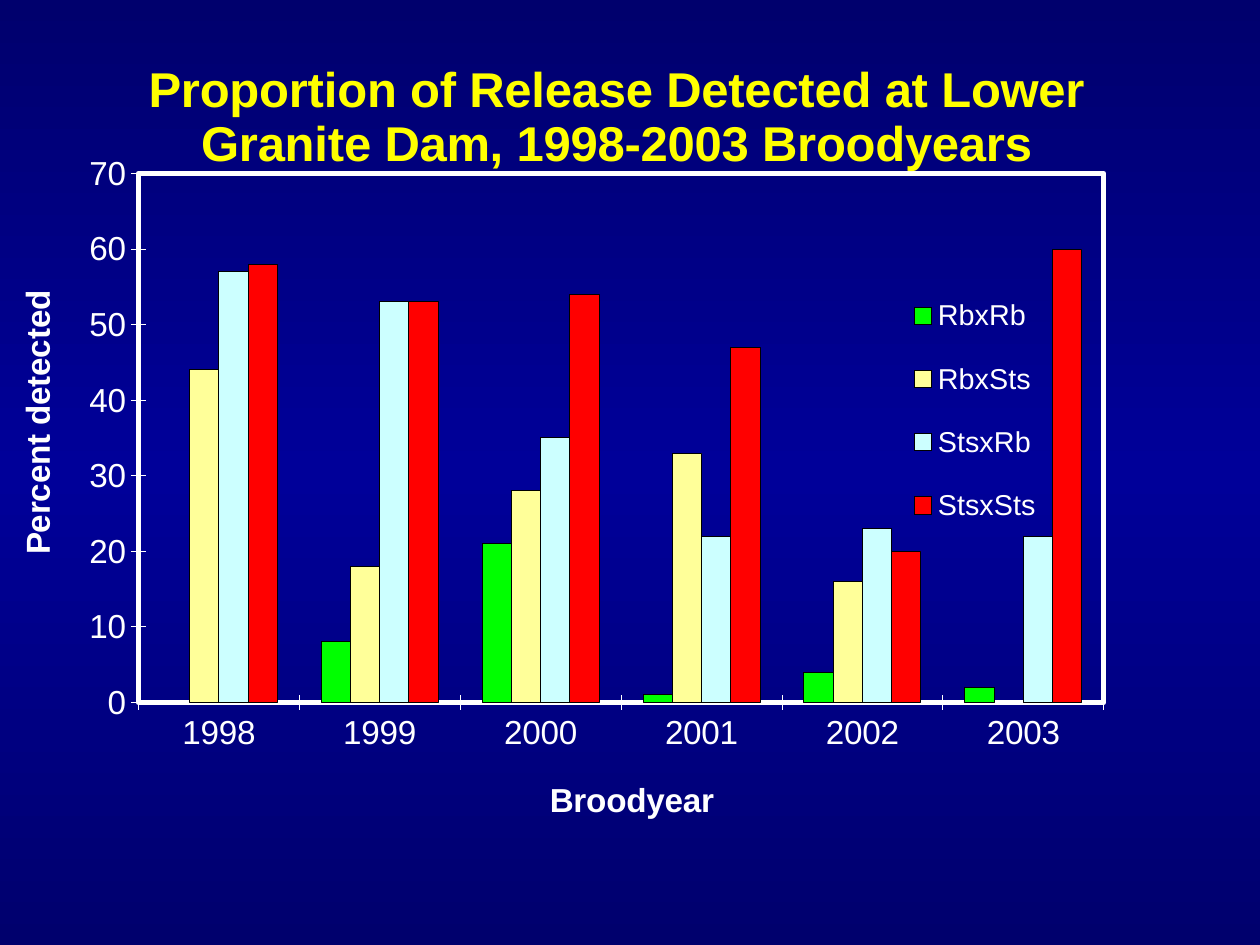
from dataclasses import dataclass

from lxml.etree import SubElement
from pptx import Presentation
from pptx.chart.data import CategoryChartData
from pptx.dml.color import RGBColor
from pptx.enum.chart import XL_CHART_TYPE as ChartType
from pptx.enum.chart import XL_LEGEND_POSITION as LegendPosition
from pptx.enum.chart import XL_TICK_MARK as TickMark
from pptx.oxml import parse_xml
from pptx.oxml.ns import nsdecls, qn
from pptx.util import Inches, Pt


@dataclass(frozen=True)
class Theme:
    font: str = "Arial"
    background: str = "000099"
    edge_shade: int = 46275
    title: str = "FFFF00"
    text: str = "FFFFFF"
    outline: str = "000000"
    title_size: float = 28
    axis_size: float = 19
    legend_size: float = 16.4
    thin_line: float = 0.54
    frame_line: float = 3


THEME = Theme()
BROODYEARS = ["1998", "1999", "2000", "2001", "2002", "2003"]
CROSSES = [
    ("RbxRb", "00FF00", [None, 8, 21, 1, 4, 2]),
    ("RbxSts", "FFFF99", [44, 18, 28, 33, 16, None]),
    ("StsxRb", "CCFFFF", [57, 53, 35, 22, 23, 22]),
    ("StsxSts", "FF0000", [58, 53, 54, 47, 20, 60]),
]


def style_font(font, size, color=THEME.text, bold=False):
    font.name = THEME.font
    font.size = Pt(size)
    font.bold = bold
    font.color.rgb = RGBColor.from_string(color)


def style_line(line, color, width=THEME.thin_line):
    line.color.rgb = RGBColor.from_string(color)
    line.width = Pt(width)


def set_background(slide):
    fill = slide.background.fill
    fill.gradient()
    stops = fill._fill._gradFill.find(qn("a:gsLst"))
    for stop in list(stops):
        stops.remove(stop)
    for position, shade in ((0, THEME.edge_shade), (50000, None), (100000, THEME.edge_shade)):
        stop = SubElement(stops, qn("a:gs"), pos=str(position))
        color = SubElement(stop, qn("a:srgbClr"), val=THEME.background)
        if shade:
            SubElement(color, qn("a:shade"), val=str(shade))
    fill.gradient_angle = 270


def place(element, x, y, width=None, height=None, inner=False):
    old_layout = element.find(qn("c:layout"))
    if old_layout is not None:
        element.remove(old_layout)
    layout = parse_xml(f"<c:layout {nsdecls('c')}><c:manualLayout/></c:layout>")
    manual = layout[0]
    if inner:
        SubElement(manual, qn("c:layoutTarget"), val="inner")
    for mode in ("xMode", "yMode"):
        SubElement(manual, qn(f"c:{mode}"), val="edge")
    for name, value in (("x", x), ("y", y), ("w", width), ("h", height)):
        if value is not None:
            SubElement(manual, qn(f"c:{name}"), val=str(value))
    overlay = element.find(qn("c:overlay"))
    if overlay is None:
        element.insert(0, layout)
    else:
        overlay.addprevious(layout)


def set_title(title, text, size, color, x, y):
    run = title.text_frame.paragraphs[0].add_run()
    run.text = text
    style_font(run.font, size, color, bold=True)
    place(title._element, x, y)


def style_axis(axis, text, x, y):
    axis.has_major_gridlines = False
    axis.major_tick_mark = TickMark.CROSS
    axis.minor_tick_mark = TickMark.NONE
    style_line(axis.format.line, THEME.text)
    style_font(axis.tick_labels.font, THEME.axis_size)
    set_title(axis.axis_title, text, THEME.axis_size, THEME.text, x, y)


def frame_plot(chart):
    plot_area = chart._chartSpace.chart.plotArea
    place(plot_area, 0.124, 0.168, 0.705, 0.673, inner=True)
    plot_area.append(parse_xml(
        f"<c:spPr {nsdecls('c', 'a')}><a:noFill/>"
        f'<a:ln w="{Pt(THEME.frame_line)}"><a:solidFill>'
        f'<a:srgbClr val="{THEME.text}"/></a:solidFill></a:ln></c:spPr>'
    ))


def add_legend(chart):
    chart.has_legend = True
    legend = chart.legend
    legend.position = LegendPosition.RIGHT
    legend.include_in_layout = False
    style_font(legend.font, THEME.legend_size)
    place(legend._element, 0.67, 0.29, 0.13, 0.36)


def add_detection_chart(slide):
    data = CategoryChartData(number_format="0")
    data.categories = BROODYEARS
    for name, _, values in CROSSES:
        data.add_series(name, values)
    chart = slide.shapes.add_chart(
        ChartType.COLUMN_CLUSTERED,
        Inches(-0.25), Inches(0.33), Inches(10.87), Inches(6.25), data,
    ).chart
    style_font(chart.font, THEME.axis_size, THEME.outline)

    plot = chart.plots[0]
    plot.gap_width = 150
    plot.overlap = 0
    plot.vary_by_categories = False
    for series, (_, color, _) in zip(plot.series, CROSSES):
        series.format.fill.solid()
        series.format.fill.fore_color.rgb = RGBColor.from_string(color)
        series.invert_if_negative = False
        style_line(series.format.line, THEME.outline)

    chart.has_title = True
    set_title(
        chart.chart_title,
        "Proportion of Release Detected at Lower Granite Dam, 1998-2003 Broodyears",
        THEME.title_size, THEME.title, 0.125, 0.01,
    )
    style_axis(chart.category_axis, "Broodyear", 0.42, 0.93)
    style_axis(chart.value_axis, "Percent detected", 0.03, 0.31)
    chart.value_axis.minimum_scale = 0
    chart.value_axis.maximum_scale = 70
    chart.value_axis.major_unit = 10
    frame_plot(chart)
    add_legend(chart)


def main():
    presentation = Presentation()
    presentation.slide_width = Inches(10)
    presentation.slide_height = Inches(7.5)
    slide = presentation.slides.add_slide(presentation.slide_layouts[6])
    set_background(slide)
    add_detection_chart(slide)
    presentation.save("out.pptx")


if __name__ == "__main__":
    main()
